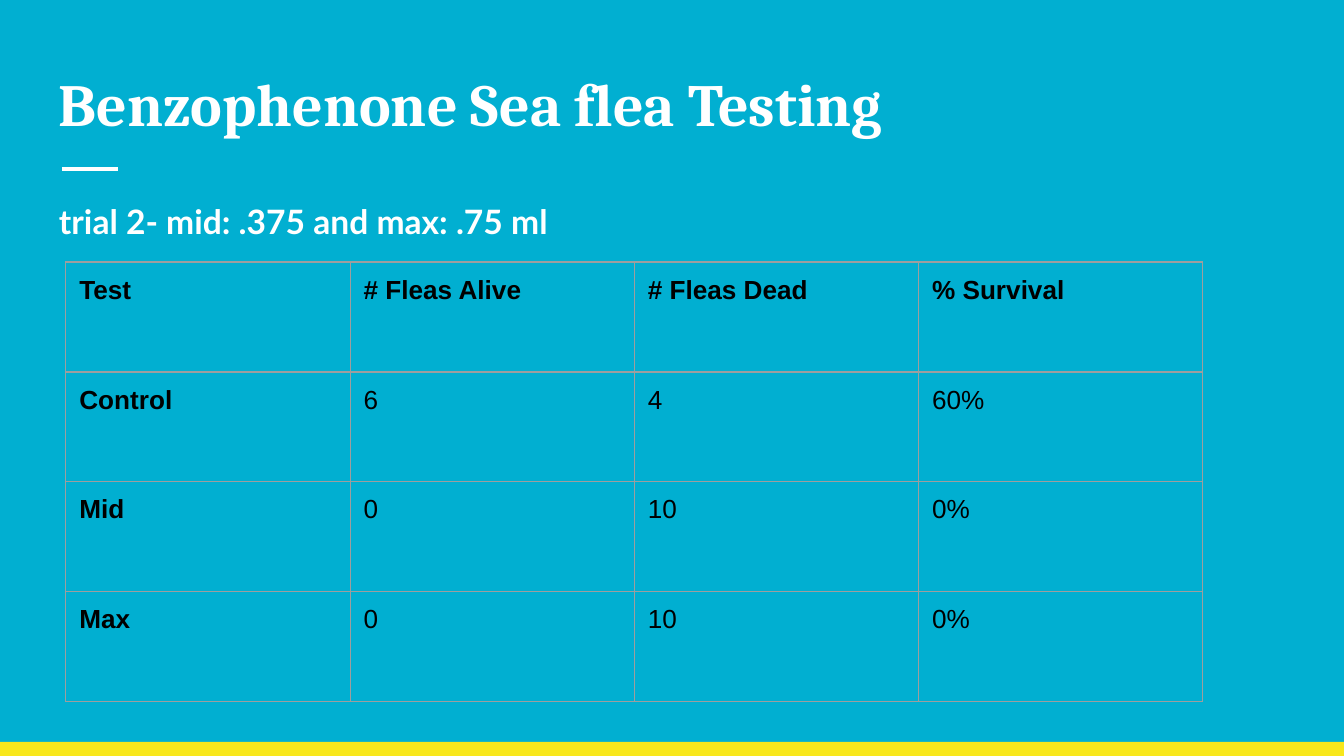
from lxml import etree
from pptx import Presentation
from pptx import util as u
from pptx.dml.color import RGBColor
from pptx.enum import shapes, text
from pptx.oxml import ns

BACKGROUND = "01AFD1"
YELLOW = "F8E71C"
WHITE = "FFFFFF"
BLACK = "000000"
GRID = "9E9E9E"
PADDING = u.Inches(0.1)

RESULTS = [
    ("Test", "# Fleas Alive", "# Fleas Dead", "% Survival"),
    ("Control", "6", "4", "60%"),
    ("Mid", "0", "10", "0%"),
    ("Max", "0", "10", "0%"),
]


def color(value):
    return RGBColor.from_string(value)


def write(frame, words, size, font, ink, bold=False, spacing=None, after=None):
    paragraph = frame.paragraphs[0]
    paragraph.alignment = text.PP_ALIGN.LEFT
    if spacing is not None:
        paragraph.line_spacing = spacing
    if after is not None:
        paragraph.space_after = u.Pt(after)
    run = paragraph.add_run()
    run.text = words
    run.font.size = u.Pt(size)
    run.font.name = font
    run.font.bold = bold
    run.font.color.rgb = color(ink)


def pad(holder):
    holder.margin_left = holder.margin_right = PADDING
    holder.margin_top = holder.margin_bottom = PADDING


def add_text(slide, left, top, width, height, words, anchor, **style):
    box = slide.shapes.add_textbox(*map(u.Inches, (left, top, width, height)))
    frame = box.text_frame
    frame.word_wrap = True
    frame.vertical_anchor = anchor
    pad(frame)
    write(frame, words, **style)


def add_band(slide, left, top, width, height, fill):
    band = slide.shapes.add_shape(
        shapes.MSO_SHAPE.RECTANGLE, *map(u.Inches, (left, top, width, height))
    )
    band.shadow.inherit = False
    band.fill.solid()
    band.fill.fore_color.rgb = color(fill)
    band.line.fill.background()


def add_rule(slide, left, right, y, ink, weight):
    rule = slide.shapes.add_connector(
        shapes.MSO_CONNECTOR.STRAIGHT, *map(u.Inches, (left, y, right, y))
    )
    rule.line.color.rgb = color(ink)
    rule.line.width = u.Pt(weight)
    etree.SubElement(rule._element.spPr, ns.qn("a:effectLst"))


def add_borders(cell, ink, weight):
    properties = cell._tc.get_or_add_tcPr()
    for side in ("a:lnL", "a:lnR", "a:lnT", "a:lnB"):
        border = etree.SubElement(properties, ns.qn(side), w=str(u.Pt(weight)))
        fill = etree.SubElement(border, ns.qn("a:solidFill"))
        etree.SubElement(fill, ns.qn("a:srgbClr"), val=ink)


def add_results(slide, left, top, width, height):
    rows, columns = len(RESULTS), len(RESULTS[0])
    table = slide.shapes.add_table(
        rows, columns, *map(u.Inches, (left, top, width, height))
    ).table
    table.first_row = table.horz_banding = False
    for column in table.columns:
        column.width = u.Inches(width / columns)
    for r, result in enumerate(RESULTS):
        table.rows[r].height = u.Inches(height / rows)
        for c, words in enumerate(result):
            cell = table.cell(r, c)
            pad(cell)
            add_borders(cell, GRID, 0.75)
            cell.fill.background()
            write(cell.text_frame, words, size=14, font="Arial", ink=BLACK,
                  bold=r == 0 or c == 0)


def main():
    deck = Presentation()
    deck.slide_width = u.Inches(10)
    deck.slide_height = u.Inches(10 * 9 / 16)
    slide = deck.slides.add_slide(deck.slide_layouts[6])
    slide.background.fill.solid()
    slide.background.fill.fore_color.rgb = color(BACKGROUND)

    add_band(slide, 0, 5.52, 10, 0.11, YELLOW)
    add_rule(slide, 0.46, 0.88, 1.26, WHITE, 2.25)
    add_text(slide, 0.34, 0.42, 9.32, 0.71, "Benzophenone Sea flea Testing",
             text.MSO_ANCHOR.BOTTOM, size=32, font="Cambria", ink=WHITE, bold=True)
    add_text(slide, 0.34, 1.35, 9.32, 3.65, "trial 2- mid: .375 and max: .75 ml",
             text.MSO_ANCHOR.TOP, size=18, font="Lato", ink=WHITE, bold=True,
             spacing=1.15, after=16)
    add_results(slide, 0.49, 1.95, 8.46, 3.27)
    deck.save("out.pptx")


if __name__ == "__main__":
    main()
